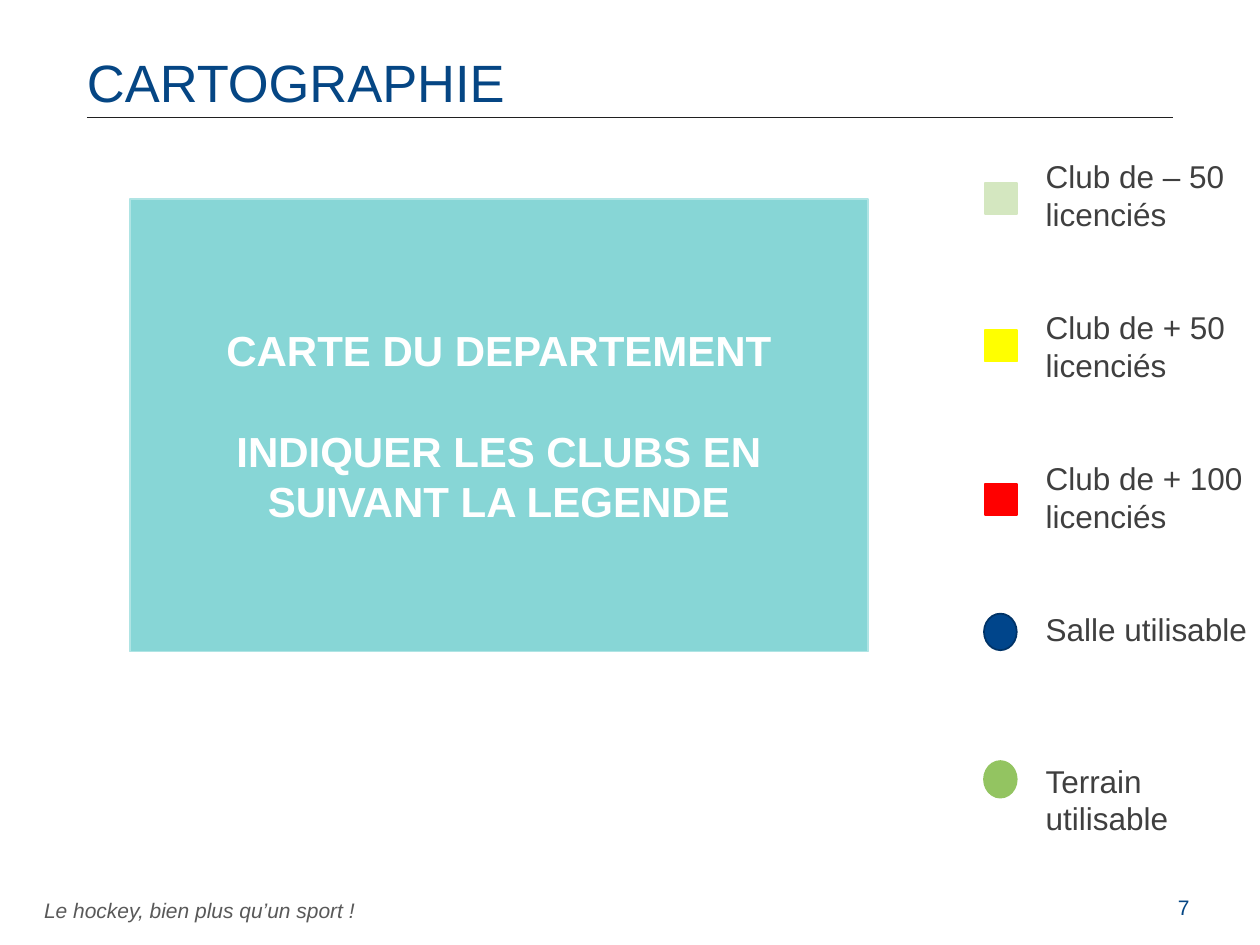
"""Build the department map slide with its legend of clubs and venues."""
from lxml.etree import SubElement
from pptx import Presentation
from pptx.dml.color import RGBColor
from pptx.enum.shapes import MSO_CONNECTOR, MSO_SHAPE
from pptx.enum.text import MSO_ANCHOR as ANCHOR, PP_ALIGN as ALIGN
from pptx.oxml.ns import qn
from pptx.util import Inches, Pt

COLORS = {
    "navy": "054684", "rule": "202020", "legend": "3F3F3F", "footer": "595959",
    "white": "FFFFFF", "map": "87D6D6", "map_edge": "AFE4E4",
    "small": "D4E7C0", "medium": "FFFF00", "large": "FF0000",
    "hall": "00458B", "hall_edge": "003367", "pitch": "93C461",
}


def write(frame, paragraphs, size, color, bold=False, italic=False, align=ALIGN.LEFT,
          anchor=ANCHOR.TOP, wrap=True, gaps=(), spacing=None, margins=(0.1, 0.05, 0.1, 0.05)):
    frame.word_wrap = wrap
    frame.vertical_anchor = anchor
    (frame.margin_left, frame.margin_top,
     frame.margin_right, frame.margin_bottom) = map(Inches, margins)
    frame.text = "\n".join(paragraphs)
    for paragraph in frame.paragraphs:
        paragraph.alignment = align
        paragraph.line_spacing = spacing
        for run in paragraph.runs:
            run.font.name = "Arial"
            run.font.size = Pt(size)
            run.font.bold = bold
            run.font.italic = italic
            run.font.color.rgb = RGBColor.from_string(COLORS[color])
    for paragraph, gap in zip(frame.paragraphs[1:], gaps):
        paragraph.space_before = Pt(gap)


def draw(kind, box, fill, edge):
    shape = slide.shapes.add_shape(kind, *map(Inches, box))
    shape.shadow.inherit = False
    shape.fill.solid()
    shape.fill.fore_color.rgb = RGBColor.from_string(COLORS[fill])
    shape.line.color.rgb = RGBColor.from_string(COLORS[edge])
    shape.line.width = Pt(1)
    return shape


prs = Presentation()
prs.slide_width, prs.slide_height = Inches(10), Inches(7.5)
slide = prs.slides.add_slide(prs.slide_layouts[5])

title = slide.shapes.title
title.left, title.top, title.width, title.height = map(Inches, (0.69, 0.4, 8.62, 0.52))
write(title.text_frame, ["CARTOGRAPHIE"], 30, "navy", spacing=0.9, margins=(0, 0.05, 0.1, 0.05))

title_rule = slide.shapes.add_connector(
    MSO_CONNECTOR.STRAIGHT, Inches(0.69), Inches(0.93), Inches(9.31), Inches(0.93))
title_rule.line.color.rgb = RGBColor.from_string(COLORS["rule"])
title_rule.line.width = Pt(0.5)
SubElement(title_rule._element.spPr, qn("a:effectLst"))

slogan = slide.shapes.add_textbox(Inches(0.35), Inches(7.12), Inches(2.5), Inches(0.2))
write(slogan.text_frame, ["Le hockey, bien plus qu’un sport !"], 12, "footer",
      italic=True, anchor=ANCHOR.MIDDLE, wrap=False, margins=(0, 0, 0, 0))

page_number = slide.shapes.add_textbox(Inches(9.25), Inches(7.05), Inches(0.47), Inches(0.4))
write(page_number.text_frame, ["7"], 12, "navy")

department_map = draw(MSO_SHAPE.RECTANGLE, (1.03, 1.58, 5.86, 3.59), "map", "map_edge")
write(department_map.text_frame,
      ["CARTE DU DEPARTEMENT", "INDIQUER LES CLUBS EN SUIVANT LA LEGENDE"],
      24, "white", bold=True, align=ALIGN.CENTER, anchor=ANCHOR.MIDDLE, gaps=[29])

legend = slide.shapes.add_textbox(Inches(8.2), Inches(1.2), Inches(1.8), Inches(5.25))
write(legend.text_frame,
      ["Club de – 50 licenciés", "Club de + 50 licenciés", "Club de + 100 licenciés",
       "Salle utilisable", "Terrain utilisable"],
      18, "legend", gaps=[43, 43, 43, 65])

for top, club_size in ((1.45, "small"), (2.62, "medium"), (3.84, "large")):
    draw(MSO_SHAPE.RECTANGLE, (7.82, top, 0.25, 0.25), club_size, club_size)

for top, venue, edge in ((4.87, "hall", "hall_edge"), (6.04, "pitch", "pitch")):
    draw(MSO_SHAPE.OVAL, (7.81, top, 0.26, 0.29), venue, edge)

prs.save("out.pptx")
